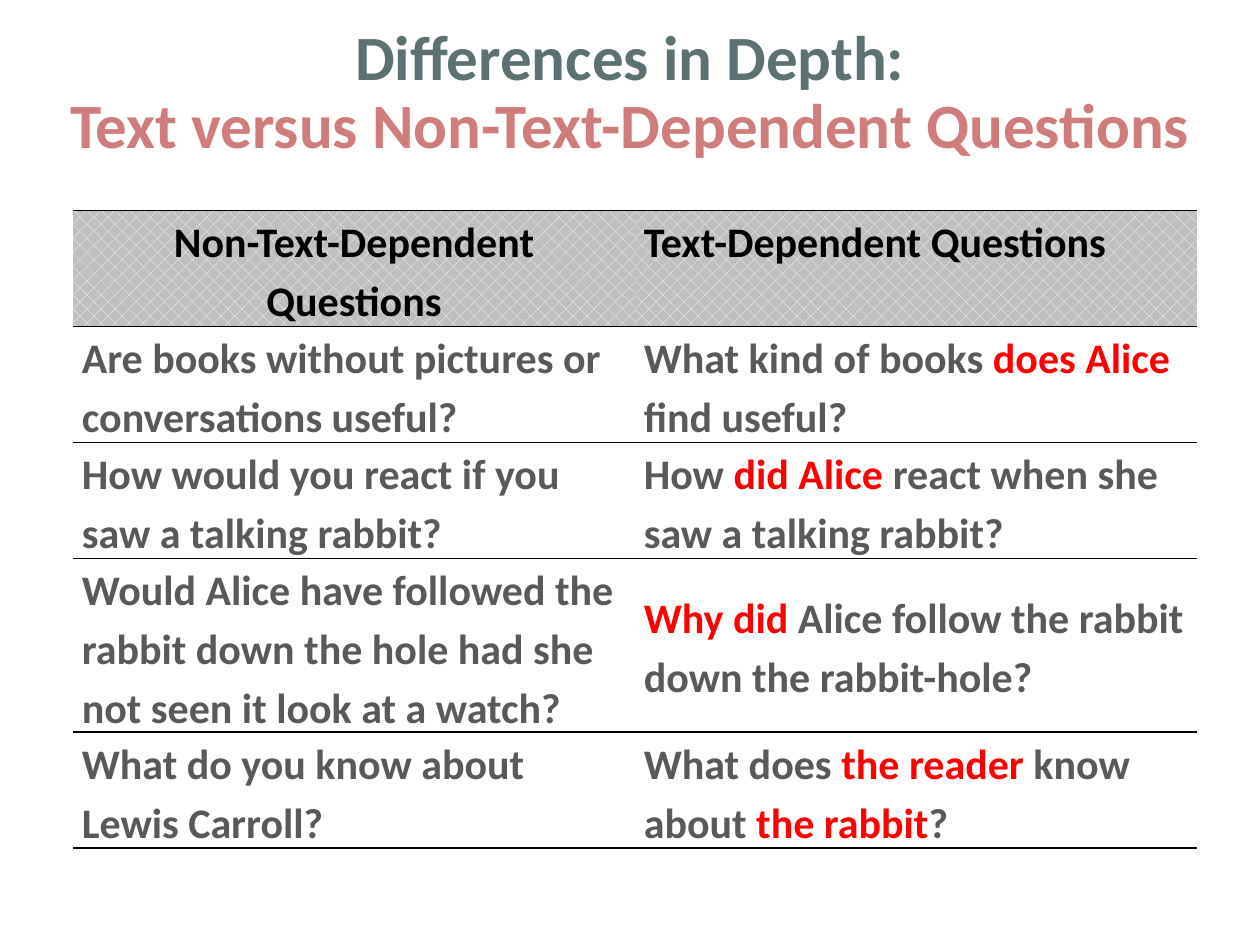
from dataclasses import dataclass

from lxml import etree
from pptx import Presentation
from pptx.dml.color import RGBColor
from pptx.enum.dml import MSO_PATTERN
from pptx.enum.text import MSO_ANCHOR, PP_ALIGN
from pptx.oxml.ns import qn
from pptx.slide import Slide
from pptx.table import _Cell
from pptx.text.text import TextFrame
from pptx.util import Inches, Pt

CENTER, LEFT = PP_ALIGN.CENTER, PP_ALIGN.LEFT
TOP, MIDDLE = MSO_ANCHOR.TOP, MSO_ANCHOR.MIDDLE
PERCENT_25 = MSO_PATTERN.PERCENT_25

COLORS = {
    "slate": "5B7172",
    "rose": "D07C7A",
    "black": "000000",
    "body": "595959",
    "accent": "FF0000",
    "header": "BFBFBF",
    "white": "FFFFFF",
}
FONT = "Calibri"
PLAIN_TABLE_STYLE = "{2D5ABB26-0587-4C30-8999-92F81FD0307C}"
LINE_HEIGHT = 0.46
THICK, THIN = 1, 0.5


@dataclass
class Span:
    text: str
    color: str = "body"


@dataclass
class TableRow:
    left: list[list[Span]]
    right: list[list[Span]]
    lines: int = 2
    top_rule: float = THICK
    bottom_rule: float = THICK
    is_header: bool = False


ROWS = [
    TableRow(
        [[Span("Non-Text-Dependent Questions", "black")]],
        [[Span("Text-Dependent Questions", "black")]],
        is_header=True,
    ),
    TableRow(
        [[Span("Are books without pictures or conversations useful?")]],
        [[Span("What kind of books "), Span("does Alice ", "accent"), Span("find useful?")]],
        bottom_rule=THIN,
    ),
    TableRow(
        [[Span("How would you react if you")], [Span("saw a talking rabbit?")]],
        [[Span("How "), Span("did Alice ", "accent"),
          Span("react when she saw a talking rabbit?")]],
        top_rule=THIN,
        bottom_rule=THIN,
    ),
    TableRow(
        [[Span("Would Alice have followed the rabbit down the hole "
               "had she not seen it look at a watch?")]],
        [[Span("Why did ", "accent"), Span("Alice follow the rabbit down the rabbit-hole?")]],
        lines=3,
        top_rule=THIN,
    ),
    TableRow(
        [[Span("What do you know about")], [Span("Lewis Carroll?")]],
        [[Span("What does "), Span("the reader ", "accent"), Span("know about "),
          Span("the rabbit", "accent"), Span("?")]],
    ),
]


def rgb(name: str) -> RGBColor:
    return RGBColor.from_string(COLORS[name])


def write_paragraphs(frame: TextFrame, paragraphs: list[list[Span]], size: int,
                     spacing: float, align: PP_ALIGN) -> None:
    font_format = {"name": FONT, "size": Pt(size), "bold": True}
    for index, spans in enumerate(paragraphs):
        para = frame.add_paragraph() if index else frame.paragraphs[0]
        para.alignment = align
        para.line_spacing = spacing
        for span in spans:
            run = para.add_run()
            run.text = span.text
            for key, value in font_format.items():
                setattr(run.font, key, value)
            run.font.color.rgb = rgb(span.color)


def add_rule(cell: _Cell, tag: str, width: float) -> None:
    """Put a horizontal border ahead of the cell's fill, as the schema requires."""
    properties = cell._tc.get_or_add_tcPr()
    line = etree.Element(qn(tag), w=str(Pt(width)))
    fill = etree.SubElement(line, qn("a:solidFill"))
    etree.SubElement(fill, qn("a:srgbClr"), val=COLORS["black"])
    properties.insert(0, line)


def fill_cell(cell: _Cell, paragraphs: list[list[Span]], row: TableRow,
              align: PP_ALIGN) -> None:
    cell_format = {
        "margin_left": Inches(0.07),
        "margin_right": Inches(0.07),
        "margin_top": 0,
        "margin_bottom": 0,
        "vertical_anchor": TOP if row.is_header else MIDDLE,
    }
    for key, value in cell_format.items():
        setattr(cell, key, value)
    write_paragraphs(cell.text_frame, paragraphs, 24, 1.15, align)
    if row.is_header:
        cell.fill.patterned()
        cell.fill.pattern = PERCENT_25
        cell.fill.fore_color.rgb = rgb("white")
        cell.fill.back_color.rgb = rgb("header")
    else:
        cell.fill.background()
    add_rule(cell, "a:lnB", row.bottom_rule)
    add_rule(cell, "a:lnT", row.top_rule)


def add_title(page: Slide) -> None:
    box = page.shapes.add_textbox(0, 0, Inches(10), Inches(1.5))
    box.text_frame.word_wrap = True
    box.text_frame.vertical_anchor = MIDDLE
    title = [
        [Span("Differences in Depth:", "slate")],
        [Span("Text versus Non-Text-Dependent Questions", "rose")],
    ]
    write_paragraphs(box.text_frame, title, 36, 0.9, CENTER)


def add_question_table(page: Slide) -> None:
    height = LINE_HEIGHT * sum(row.lines for row in ROWS)
    frame = page.shapes.add_table(len(ROWS), 2, Inches(0.58), Inches(1.67),
                                  Inches(8.92), Inches(height))
    table = frame.table
    table.horz_banding = False
    table._tbl.tblPr.find(qn("a:tableStyleId")).text = PLAIN_TABLE_STYLE
    for index, row in enumerate(ROWS):
        table.rows[index].height = Inches(LINE_HEIGHT * row.lines)
        fill_cell(table.cell(index, 0), row.left, row, CENTER if row.is_header else LEFT)
        fill_cell(table.cell(index, 1), row.right, row, LEFT)


def main() -> None:
    deck = Presentation()
    deck.slide_width, deck.slide_height = Inches(10), Inches(7.5)
    page = deck.slides.add_slide(deck.slide_layouts[6])
    add_title(page)
    add_question_table(page)
    deck.save("out.pptx")


if __name__ == "__main__":
    main()
